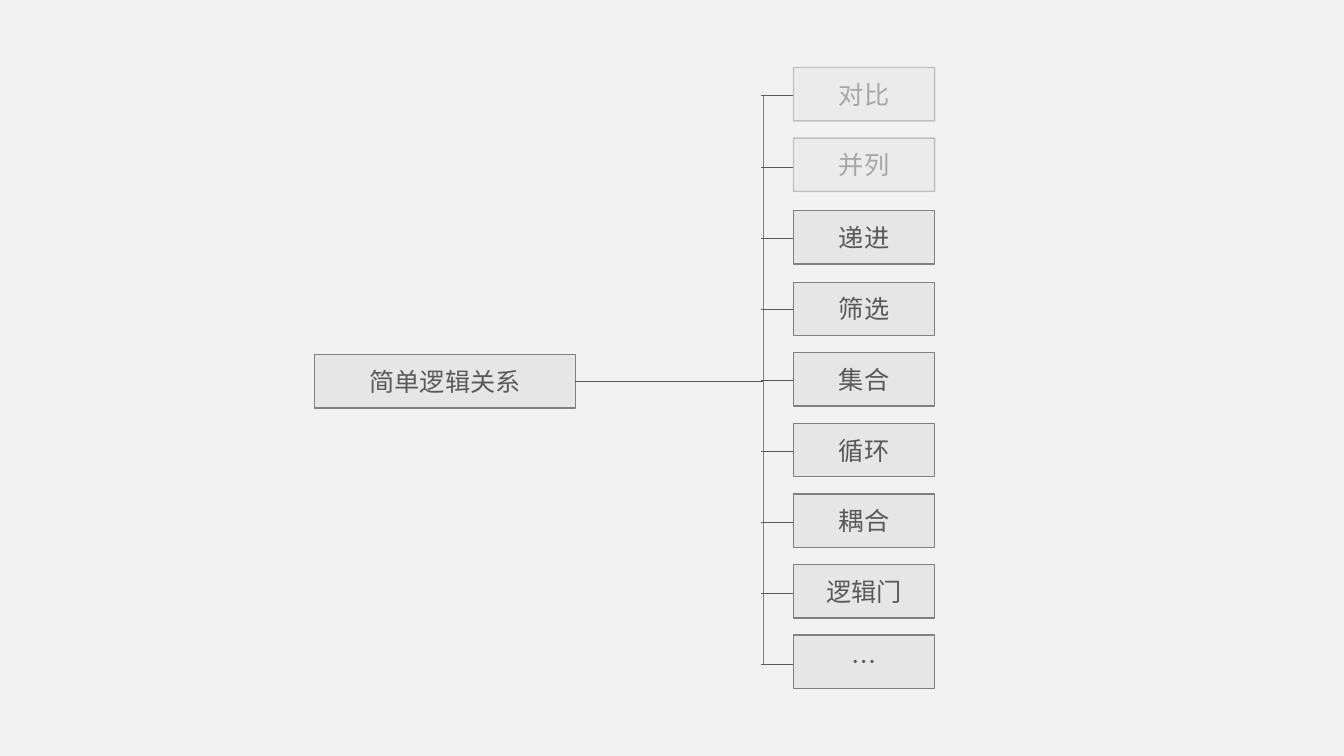
from lxml import etree
from pptx import Presentation
from pptx import util as u
from pptx.dml.color import RGBColor
from pptx.enum import shapes, text
from pptx.oxml import ns

COLORS = {
    "background": "F2F2F2",
    "fill": "E7E6E6",
    "border": "808080",
    "ink": "595959",
    "faded": "A6A6A6",
}
BRANCHES = [
    ("对比", 0.67), ("并列", 1.37), ("递进", 2.09),
    ("筛选", 2.8), ("集合", 3.5), ("循环", 4.2),
    ("耦合", 4.9), ("逻辑门", 5.6), ("…", 6.3),
]
FADED_BRANCHES = ("对比", "并列")
BOX_HEIGHT = 0.53
BRANCH_LEFT = 7.87
FIRST_TICK = 0.95
TICK_STEP = 0.705
ROOT_Y = 3.78


class LogicTree:
    font = "Noto Sans CJK SC"
    size = u.Pt(18)

    def __init__(self, page):
        self.page = page
        page.background.fill.solid()
        page.background.fill.fore_color.rgb = self.color("background")

    def color(self, name):
        return RGBColor.from_string(COLORS[name])

    def box(self, label, left, top, width, faded=False):
        box = self.page.shapes.add_shape(
            shapes.MSO_SHAPE.RECTANGLE,
            u.Inches(left), u.Inches(top), u.Inches(width), u.Inches(BOX_HEIGHT))
        box.shadow.inherit = False
        box.fill.solid()
        box.fill.fore_color.rgb = self.color("fill")
        box.line.color.rgb = self.color("border")
        box.line.width = u.Pt(1)
        if faded:
            tints = box._element.spPr.iter(ns.qn("a:srgbClr"))
            for tint, opacity in zip(list(tints), (50, 42)):
                etree.SubElement(tint, ns.qn("a:alpha"), val=str(opacity * 1000))
        self.label(box.text_frame, label, "faded" if faded else "ink")

    def label(self, frame, label, color):
        frame.text = label
        frame.vertical_anchor = text.MSO_ANCHOR.MIDDLE
        para = frame.paragraphs[0]
        para.alignment = text.PP_ALIGN.CENTER
        span = para.runs[0]
        span.font.size = self.size
        span.font.color.rgb = self.color(color)
        span.font.name = self.font
        etree.SubElement(span._r.get_or_add_rPr(), ns.qn("a:ea"), typeface=self.font)

    def line(self, x1, y1, x2, y2, color="ink"):
        line = self.page.shapes.add_connector(
            shapes.MSO_CONNECTOR.STRAIGHT,
            u.Inches(x1), u.Inches(y1), u.Inches(x2), u.Inches(y2))
        line.line.color.rgb = self.color(color)
        line.line.width = u.Pt(0.5)
        etree.SubElement(line._element.spPr, ns.qn("a:effectLst"))


def main():
    deck = Presentation()
    deck.slide_width = u.Inches(13.33)
    deck.slide_height = u.Inches(7.5)
    tree = LogicTree(deck.slides.add_slide(deck.slide_layouts[6]))

    tree.box("简单逻辑关系", 3.12, 3.52, 2.59)
    tree.line(5.7, ROOT_Y, 7.58, ROOT_Y)
    last_tick = FIRST_TICK + TICK_STEP * (len(BRANCHES) - 1)
    tree.line(7.57, FIRST_TICK, 7.57, last_tick, "border")

    for index, (label, top) in enumerate(BRANCHES):
        tree.box(label, BRANCH_LEFT, top, 1.4, label in FADED_BRANCHES)
        tick = round(FIRST_TICK + TICK_STEP * index + 0.004, 2)
        tree.line(7.55, tick, BRANCH_LEFT, tick)

    deck.save("out.pptx")


if __name__ == "__main__":
    main()
